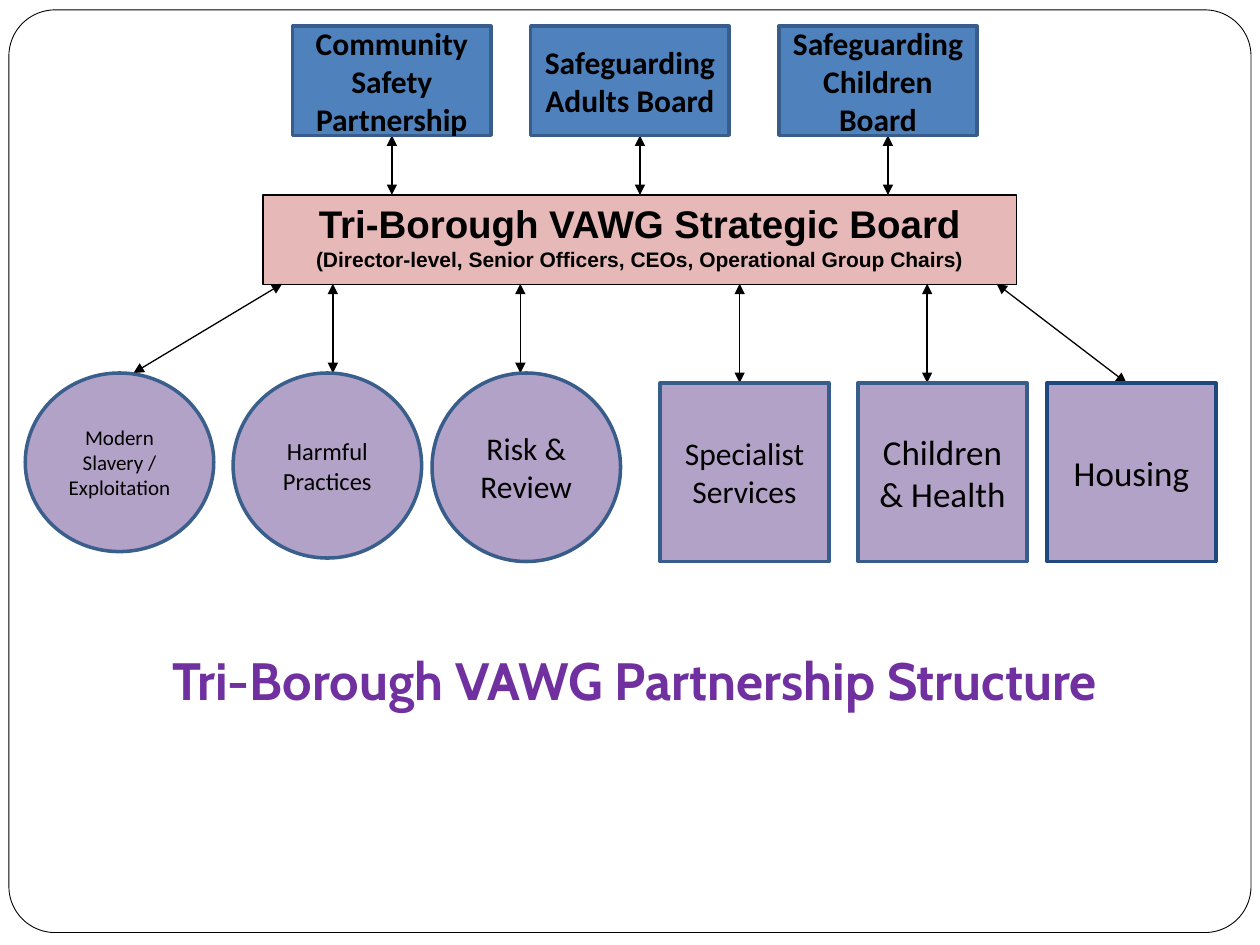
import pptx
import pptx.util
import pptx.dml.color
import pptx.enum.shapes
import pptx.enum.text
import pptx.oxml.ns
from lxml import etree

Cm = pptx.util.Cm
Pt = pptx.util.Pt
RGB = pptx.dml.color.RGBColor
SHAPE = pptx.enum.shapes.MSO_SHAPE
ANCHOR = pptx.enum.text.MSO_ANCHOR

BLACK = RGB(0x00, 0x00, 0x00)
WHITE = RGB(0xFF, 0xFF, 0xFF)
PINK = RGB(0xE6, 0xB9, 0xB8)
BLUE = RGB(0x4F, 0x81, 0xBD)
LILAC = RGB(0xB3, 0xA2, 0xC7)
EDGE = RGB(0x38, 0x5D, 0x8A)
CIRCLE_EDGE = RGB(0x3A, 0x5F, 0x8C)
NAVY = RGB(0x1F, 0x49, 0x7D)
PURPLE = RGB(0x70, 0x30, 0xA0)


def add_box(slide, kind, box, fill, edge, weight):
    sp = slide.shapes.add_shape(kind, *(Cm(v) for v in box))
    sp.shadow.inherit = False
    sp.fill.solid()
    sp.fill.fore_color.rgb = fill
    sp.line.color.rgb = edge
    sp.line.width = Pt(weight)
    return sp


def write(sp, lines, font="Calibri", color=BLACK, bold=False, anchor=ANCHOR.MIDDLE):
    """Fill a shape with centred paragraphs given as (text, size) pairs."""
    tf = sp.text_frame
    tf.word_wrap = True
    tf.vertical_anchor = anchor
    for i, (text, size) in enumerate(lines):
        p = tf.add_paragraph() if i else tf.paragraphs[0]
        p.alignment = pptx.enum.text.PP_ALIGN.CENTER
        r = p.add_run()
        r.text = text
        r.font.name = font
        r.font.size = Pt(size)
        r.font.bold = bold
        r.font.color.rgb = color


def add_arrow(slide, x1, y1, x2, y2):
    """Draw a line with an arrowhead at each end."""
    cxn = slide.shapes.add_connector(
        pptx.enum.shapes.MSO_CONNECTOR.STRAIGHT, Cm(x1), Cm(y1), Cm(x2), Cm(y2))
    cxn.line.color.rgb = BLACK
    cxn.line.width = Pt(0.75)
    ln = cxn.line._get_or_add_ln()
    for end in ("a:headEnd", "a:tailEnd"):
        etree.SubElement(ln, pptx.oxml.ns.qn(end), type="triangle")
    etree.SubElement(cxn._element.spPr, pptx.oxml.ns.qn("a:effectLst"))


def add_frame(slide, box):
    sp = add_box(slide, SHAPE.ROUNDED_RECTANGLE, box, WHITE, BLACK, 0.5)
    sp.adjustments[0] = 0.05


def add_strategic_board(slide, box):
    sp = add_box(slide, SHAPE.RECTANGLE, box, PINK, BLACK, 0.75)
    tf = sp.text_frame
    tf.margin_left = tf.margin_right = tf.margin_top = tf.margin_bottom = Cm(0.1)
    write(sp, [("Tri-Borough VAWG Strategic Board", 22),
               ("(Director-level, Senior Officers, CEOs, Operational Group Chairs)", 12)],
          font="Arial", bold=True, anchor=ANCHOR.TOP)


def add_parent_boards(slide, box):
    """Place the upper boards, with arrows down to the foot of the box."""
    left, top, width, height = box
    w, h = 4, 2.2
    boards = [
        (0, ["Community Safety Partnership"]),
        (4.8, ["Safeguarding Adults Board"]),
        (width - w, ["Safeguarding", "Children Board"]),
    ]
    for i, (x, lines) in enumerate(boards):
        arrow_x = left + 2 + i * 5
        add_arrow(slide, arrow_x, top + h, arrow_x, top + height)
        sp = add_box(slide, SHAPE.RECTANGLE, (left + x, top, w, h), BLUE, EDGE, 2)
        write(sp, [(line, 18) for line in lines], bold=True)


def add_operational_groups(slide, box):
    """Place the lower groups, with arrows from the head of the box."""
    left, top, width, height = box
    oval, square = SHAPE.OVAL, SHAPE.RECTANGLE
    # kind, x, width, height, arrow start, arrow end, edge, size, lines
    groups = [
        (oval, 0, 3.8, 3.6, 5.18, 2.18, CIRCLE_EDGE, 12,
         ["Modern Slavery /", "Exploitation"]),
        (oval, 4.19, 3.8, 3.73, 6.2, 6.2, CIRCLE_EDGE, 14, ["Harmful Practices"]),
        (oval, 8.2, 3.8, 3.8, 9.98, 9.98, EDGE, 18, ["Risk & Review"]),
        (square, 12.8, 3.4, 3.6, 14.4, 14.4, EDGE, 18, ["Specialist Services"]),
        (square, 16.79, 3.4, 3.6, 18.18, 18.18, EDGE, 20, ["Children & Health"]),
        (square, width - 3.4, 3.4, 3.6, 19.58, 22.2, NAVY, 20, ["Housing"]),
    ]
    for kind, x, w, h, start, end, edge, size, lines in groups:
        y = top + (1.8 if kind == oval else 2)
        add_arrow(slide, left + start, top, left + end, y)
        sp = add_box(slide, kind, (left + x, y, w, h), LILAC, edge, 2)
        write(sp, [(line, size) for line in lines])


def add_title(slide, box):
    tb = slide.shapes.add_textbox(*(Cm(v) for v in box))
    write(tb, [("Tri-Borough VAWG Partnership Structure", 30)],
          font="Cabin", color=PURPLE, bold=True, anchor=ANCHOR.TOP)


def main():
    prs = pptx.Presentation()
    prs.slide_width, prs.slide_height = Cm(25.4), Cm(19.05)
    slide = prs.slides.add_slide(prs.slide_layouts[6])
    add_frame(slide, (0.18, 0.2, 25.04, 18.6))
    add_strategic_board(slide, (5.3, 3.93, 15.2, 1.8))
    add_parent_boards(slide, (5.9, 0.53, 13.8, 3.4))
    add_operational_groups(slide, (0.51, 5.72, 24, 5.6))
    add_title(slide, (1.9, 12.93, 21.8, 1.55))
    prs.save("out.pptx")


if __name__ == "__main__":
    main()
